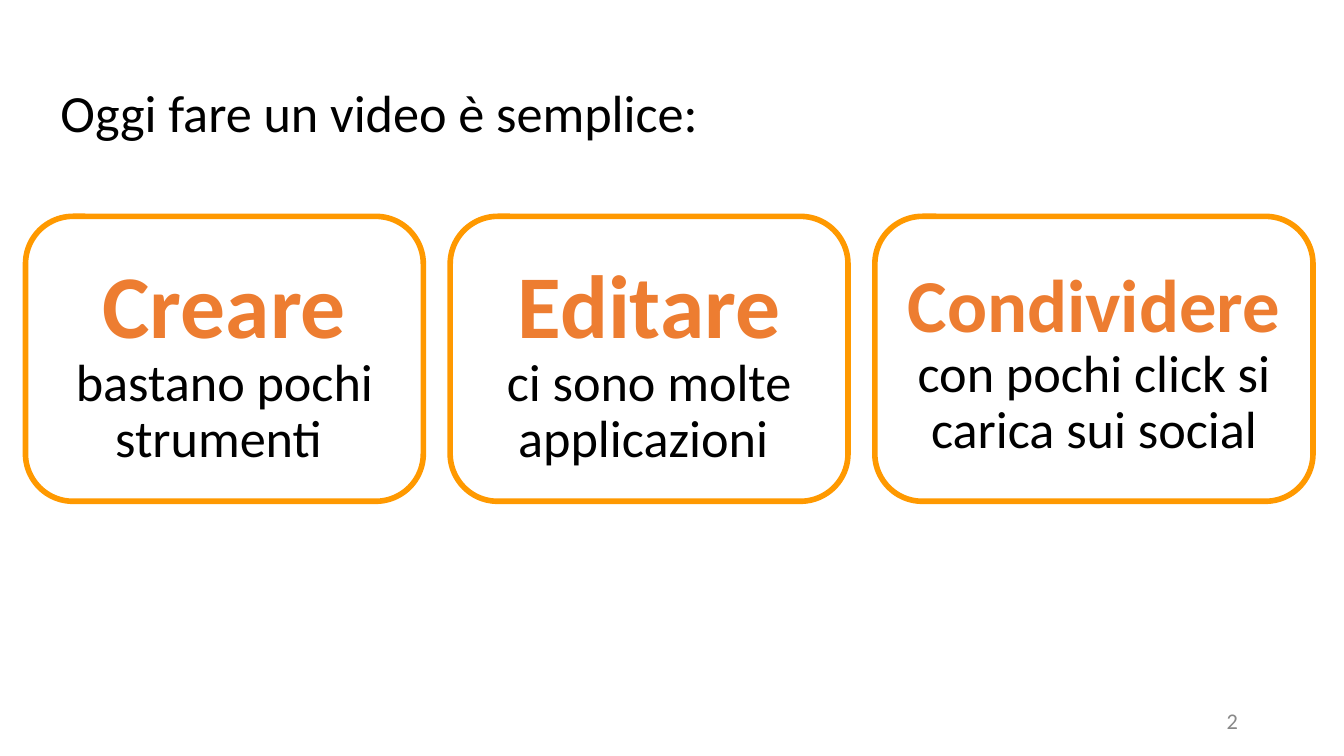
import pptx
import pptx.dml.color
import pptx.enum.shapes
import pptx.enum.text
import pptx.util

Inches = pptx.util.Inches
Align = pptx.enum.text.PP_ALIGN
Anchor = pptx.enum.text.MSO_ANCHOR

SLIDE_WIDTH = 10
SLIDE_HEIGHT = SLIDE_WIDTH * 9 / 16
FONT = "Calibri"
COLORS = {
    "background": "FFFFFF",
    "border": "FF9900",
    "heading": "ED7D31",
    "text": "000000",
    "number": "888888",
}

CARD_LEFT, CARD_TOP, CARD_HEIGHT, CARD_GAP = 0.19, 1.61, 2.12, 0.2
# Heading, heading size, description, card width
CARDS = [
    ("Creare", 48, "bastano pochi strumenti ", 2.96),
    ("Editare", 48, "ci sono molte applicazioni ", 2.96),
    ("Condividere", 40, "con pochi click si carica sui social", 3.26),
]


def rgb(name):
    return pptx.dml.color.RGBColor.from_string(COLORS[name])


def write_paragraph(paragraph, text, size, color, align, bold=False, spacing=1.0):
    paragraph.text = text
    paragraph.alignment = align
    paragraph.line_spacing = spacing
    for run in paragraph.runs:
        run.font.name = FONT
        run.font.size = pptx.util.Pt(size)
        run.font.bold = bold
        run.font.color.rgb = rgb(color)


def prepare_frame(shape, anchor, vertical_inset):
    frame = shape.text_frame
    frame.word_wrap = True
    frame.auto_size = pptx.enum.text.MSO_AUTO_SIZE.NONE
    frame.vertical_anchor = anchor
    frame.margin_left = frame.margin_right = Inches(0.1)
    frame.margin_top = frame.margin_bottom = Inches(vertical_inset)
    return frame


def write_title(slide, text):
    title = slide.shapes.title
    title.left, title.top = Inches(0.35), Inches(0.6)
    title.width, title.height = Inches(7.56), Inches(0.64)
    frame = prepare_frame(title, Anchor.TOP, 0.05)
    write_paragraph(frame.paragraphs[0], text, 28, "text", Align.LEFT, spacing=0.9)


def add_slide_number(slide, text):
    box = slide.shapes.add_textbox(
        Inches(7.06), Inches(5.21), Inches(2.25), Inches(0.3))
    frame = prepare_frame(box, Anchor.MIDDLE, 0.05)
    write_paragraph(frame.paragraphs[0], text, 12, "number", Align.RIGHT)


def add_card(slide, left, width, heading, heading_size, description):
    card = slide.shapes.add_shape(
        pptx.enum.shapes.MSO_SHAPE.ROUNDED_RECTANGLE,
        Inches(left), Inches(CARD_TOP), Inches(width), Inches(CARD_HEIGHT))
    card.shadow.inherit = False
    card.fill.background()
    card.line.color.rgb = rgb("border")
    card.line.width = pptx.util.Pt(3)
    frame = prepare_frame(card, Anchor.MIDDLE, 0.1)
    write_paragraph(frame.paragraphs[0], heading, heading_size, "heading",
                    Align.CENTER, bold=True)
    write_paragraph(frame.add_paragraph(), description, 28, "text",
                    Align.CENTER, spacing=0.9)


def main():
    presentation = pptx.Presentation()
    presentation.slide_width = Inches(SLIDE_WIDTH)
    presentation.slide_height = Inches(SLIDE_HEIGHT)
    title_only = presentation.slide_layouts[5]
    slide = presentation.slides.add_slide(title_only)
    slide.background.fill.solid()
    slide.background.fill.fore_color.rgb = rgb("background")

    write_title(slide, "Oggi fare un video è semplice:")
    left = CARD_LEFT
    for heading, heading_size, description, width in CARDS:
        add_card(slide, left, width, heading, heading_size, description)
        left += width + CARD_GAP
    add_slide_number(slide, "2")

    presentation.save("out.pptx")


if __name__ == "__main__":
    main()
